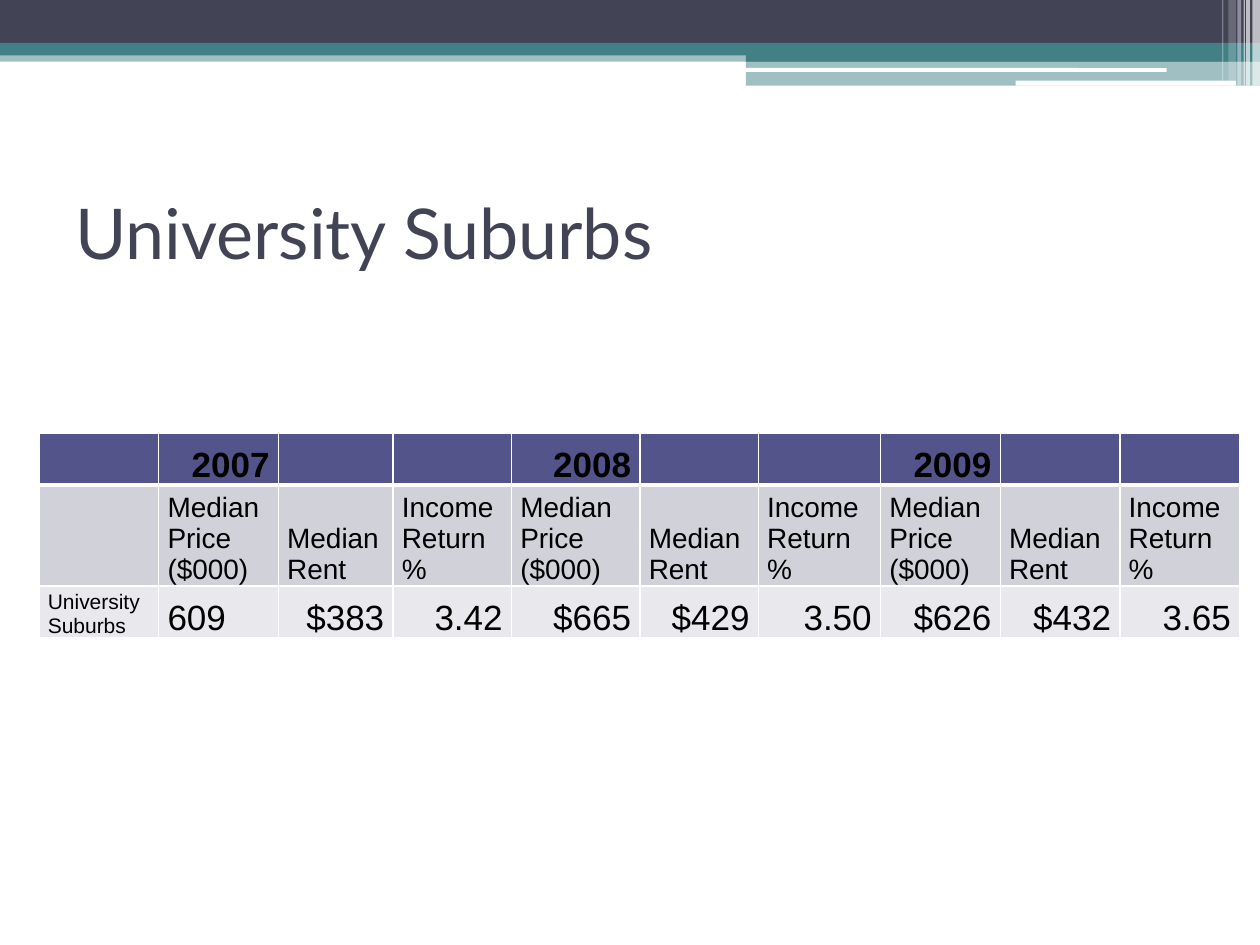
from lxml import etree
from pptx import Presentation
from pptx.dml.color import RGBColor
from pptx.enum.shapes import MSO_SHAPE as Shape
from pptx.enum.text import MSO_ANCHOR as Anchor, PP_ALIGN as Align
from pptx.oxml.ns import qn
from pptx.util import Inches, Pt

NAVY, TEAL, WHITE = "424456", "438086", "FFFFFF"
FILLS = ["53548A", "D1D1DA", "E9E9ED"]
WIDTHS = [0.95, 0.95, 0.91, 0.94, 1.02, 0.94, 0.97, 0.95, 0.95, 0.95]
YEARS = ["2007", "2008", "2009"]
HEADS = ["Median Price ($000)", "Median Rent", "Income Return %"]
ROWS = [
    [""] + [text for year in YEARS for text in (year, "", "")],
    [""] + HEADS * len(YEARS),
    ["University Suburbs", "609", "$383", "3.42", "$665", "$429", "3.50",
     "$626", "$432", "3.65"],
]
# left, top, width, height, colour, opacity in percent
BANDS = [
    (0, 0.4, 10, 0.09, TEAL, 50),
    (0, 0, 10, 0.34, NAVY, 100),
    (0, 0.34, 10, 0.1, TEAL, 100),
    (5.92, 0.39, 4.08, 0.1, TEAL, 100),
    (5.92, 0.48, 4.08, 0.2, TEAL, 50),
]
BARS = [(5.91, 0.54, 3.35, 0.03), (8.06, 0.64, 1.75, 0.04)]
# left, width, height, opacity in percent
STRIPES = [
    (9.94, 0.06, 0.68, 65), (9.89, 0.03, 0.68, 65), (9.87, 0.01, 0.68, 60),
    (9.82, 0.03, 0.68, 40), (9.75, 0.06, 0.64, 20), (9.7, 0.01, 0.64, 30),
]


def paint(fill, color, alpha=100):
    fill.solid()
    fill.fore_color.rgb = RGBColor.from_string(color)
    if alpha < 100:
        tone = fill._xPr.find(".//" + qn("a:srgbClr"))
        etree.SubElement(tone, qn("a:alpha"), val=str(alpha * 1000))


def style(font, name, size, color, bold=False):
    font.name, font.size, font.bold = name, Pt(size), bold
    font.color.rgb = RGBColor.from_string(color)


def add_block(slide, box, color, alpha=100, kind=Shape.RECTANGLE):
    block = slide.shapes.add_shape(kind, *map(Inches, box))
    block.shadow.inherit = False
    block.line.fill.background()
    paint(block.fill, color, alpha)


def add_banner(slide, left, top):
    for x, y, wide, high, color, alpha in BANDS:
        add_block(slide, (left + x, top + y, wide, high), color, alpha)
    for x, y, wide, high in BARS:
        add_block(slide, (left + x, top + y, wide, high), WHITE,
                  kind=Shape.ROUNDED_RECTANGLE)
    for x, wide, high, alpha in STRIPES:
        add_block(slide, (left + x, top, wide, high), WHITE, alpha)


def add_title(slide, box, text):
    frame = slide.shapes.add_textbox(*map(Inches, box)).text_frame
    frame.word_wrap = True
    frame.vertical_anchor = Anchor.MIDDLE
    frame.text = text
    style(frame.paragraphs[0].runs[0].font, "Lato", 40, NAVY)


def add_edges(cell, top, bottom):
    """Draw white cell borders; top and bottom are widths in points."""
    props = cell._tc.get_or_add_tcPr()
    for side, width in zip("LRTB", (1, 1, top, bottom)):
        line = etree.SubElement(props, qn("a:ln" + side), w=str(Pt(width)))
        fill = etree.SubElement(line, qn("a:solidFill"))
        etree.SubElement(fill, qn("a:srgbClr"), val=WHITE)


def fill_cell(cell, text, row, col):
    add_edges(cell, 3 if row == 1 else 1, 3 if row == 0 else 1)
    paint(cell.fill, FILLS[row])
    if not text:
        return
    cell.vertical_anchor = Anchor.BOTTOM
    cell.margin_left = cell.margin_right = Inches(0.07)
    cell.margin_top = cell.margin_bottom = 0
    cell.text_frame.text = text
    para = cell.text_frame.paragraphs[0]
    if row == 0 or (row == 2 and col > 1):
        para.alignment = Align.RIGHT
    size = 16 if row == 1 else 12 if col == 0 else 20
    style(para.runs[0].font, "Arial", size, "000000", row == 0)


def add_prices(slide, left, top):
    high = 0.41
    box = (left, top, sum(WIDTHS), high * len(ROWS))
    table = slide.shapes.add_table(len(ROWS), len(WIDTHS),
                                   *map(Inches, box)).table
    for column, width in zip(table.columns, WIDTHS):
        column.width = Inches(width)
    for r, texts in enumerate(ROWS):
        table.rows[r].height = Inches(0.74 if r == 1 else high)
        for c, text in enumerate(texts):
            fill_cell(table.cell(r, c), text, r, c)


def main():
    deck = Presentation()
    deck.slide_width, deck.slide_height = Inches(10), Inches(7.5)
    slide = deck.slides.add_slide(deck.slide_layouts[6])
    add_banner(slide, 0, 0)
    add_title(slide, (0.5, 1.25, 9, 1.17), "University Suburbs")
    add_prices(slide, 0.31, 3.44)
    deck.save("out.pptx")


if __name__ == "__main__":
    main()
